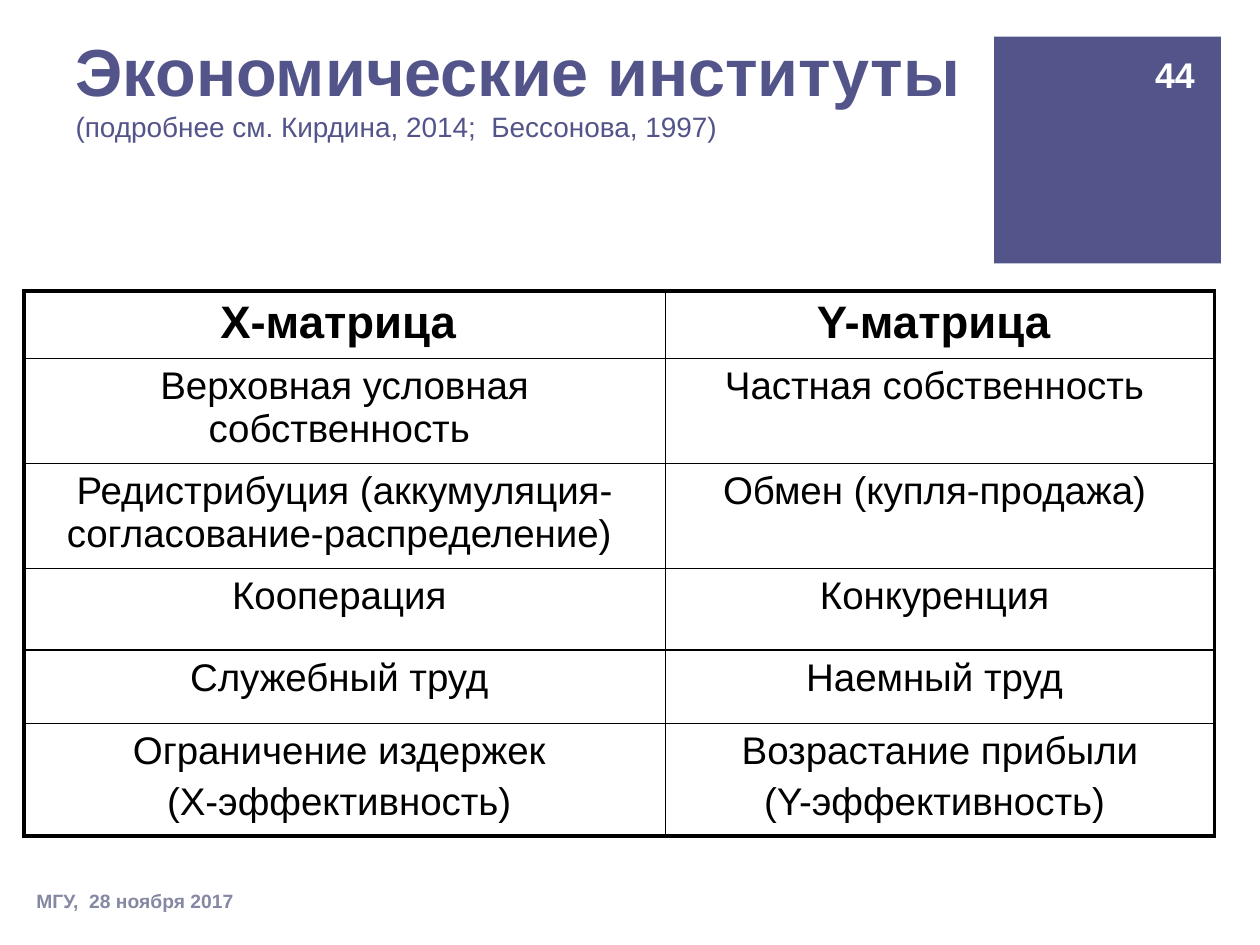
"""Build the slide comparing economic institutions of the X and Y matrices."""
from lxml.etree import SubElement
from pptx import Presentation
from pptx.dml.color import RGBColor
from pptx.enum.shapes import MSO_SHAPE as Shape
from pptx.enum.text import MSO_ANCHOR as Anchor, MSO_AUTO_SIZE as AutoSize, PP_ALIGN as Align
from pptx.oxml.ns import qn
from pptx.util import Inches, Pt

ACCENT, BLACK = "53548A", "000000"


def add_run(paragraph, text, size, color, bold):
    run = paragraph.add_run()
    run.text = text
    run.font.name = "Arial"
    run.font.size = Pt(size)
    run.font.bold = bold
    run.font.color.rgb = RGBColor.from_string(color)


def add_border(cell, side, width):
    line = SubElement(cell._tc.get_or_add_tcPr(), qn(f"a:ln{side}"), w=str(Pt(width)))
    fill = SubElement(line, qn("a:solidFill"))
    SubElement(fill, qn("a:srgbClr"), val=BLACK)


presentation = Presentation()
presentation.slide_width = Inches(10)
presentation.slide_height = Inches(7.5)
slide = presentation.slides.add_slide(presentation.slide_layouts[5])

title = slide.shapes.title
title.left, title.top, title.width, title.height = map(Inches, (0.5, 0.13, 8.25, 1.06))
title.text_frame.auto_size = AutoSize.NONE
title.text_frame.vertical_anchor = Anchor.BOTTOM
heading = title.text_frame.paragraphs[0]
heading.alignment = Align.LEFT
add_run(heading, "Экономические институты", 38, ACCENT, True)
heading.add_line_break()
add_run(heading, "(подробнее см. Кирдина, 2014;  Бессонова, 1997)", 16, ACCENT, False)

square = slide.shapes.add_shape(Shape.RECTANGLE, *map(Inches, (7.89, 0.29, 1.8, 1.8)))
square.shadow.inherit = False
square.fill.solid()
square.fill.fore_color.rgb = RGBColor.from_string(ACCENT)
square.line.fill.background()

labels = [
    ("МГУ,  28 ноября 2017", (0.19, 6.95, 6.57, 0.4), 11, "8588A2", Align.LEFT),
    ("44", (9.03, 0.39, 0.55, 0.4), 20.4, "FFFFFF", Align.RIGHT),
]
for text, box, size, color, alignment in labels:
    label = slide.shapes.add_textbox(*map(Inches, box))
    label.text_frame.word_wrap = True
    label.text_frame.vertical_anchor = Anchor.MIDDLE
    paragraph = label.text_frame.paragraphs[0]
    paragraph.alignment = alignment
    add_run(paragraph, text, size, color, True)

rows = [
    (["Х-матрица "], ["Y-матрица "]),
    (["Верховная условная собственность "], ["Частная собственность "]),
    (["Редистрибуция (аккумуляция-согласование-распределение) "], ["Обмен (купля-продажа) "]),
    (["Кооперация "], ["Конкуренция "]),
    (["Служебный труд "], ["Наемный труд "]),
    (["Ограничение издержек ", "(Х-эффективность) "], ["Возрастание прибыли", "(Y-эффективность) "]),
]
column_widths = [5.09, 4.36]
row_heights = [0.5, 0.82, 0.82, 0.65, 0.58, 0.84]
last_row, last_column = len(rows) - 1, len(column_widths) - 1

frame = slide.shapes.add_table(len(rows), len(column_widths), Inches(0.19), Inches(2.31),
                               Inches(sum(column_widths)), Inches(sum(row_heights)))
table = frame.table
table.first_row = table.horz_banding = False
for column, width in zip(table.columns, column_widths):
    column.width = Inches(width)
for row, height in zip(table.rows, row_heights):
    row.height = Inches(height)

for row_index, row in enumerate(rows):
    size = 26 if row_index == 0 else 22
    for column_index, lines in enumerate(row):
        cell = table.cell(row_index, column_index)
        outer_edges = {"L": column_index == 0, "R": column_index == last_column,
                       "T": row_index == 0, "B": row_index == last_row}
        for side, is_outer in outer_edges.items():
            add_border(cell, side, 2.25 if is_outer else 1)
        cell.fill.background()
        for line_index, text in enumerate(lines):
            paragraph = cell.text_frame.paragraphs[0] if line_index == 0 else cell.text_frame.add_paragraph()
            paragraph.alignment = Align.CENTER
            paragraph.space_before = Pt(size * 0.2 if line_index else 0)
            add_run(paragraph, text, size, BLACK, row_index == 0)

presentation.save("out.pptx")
